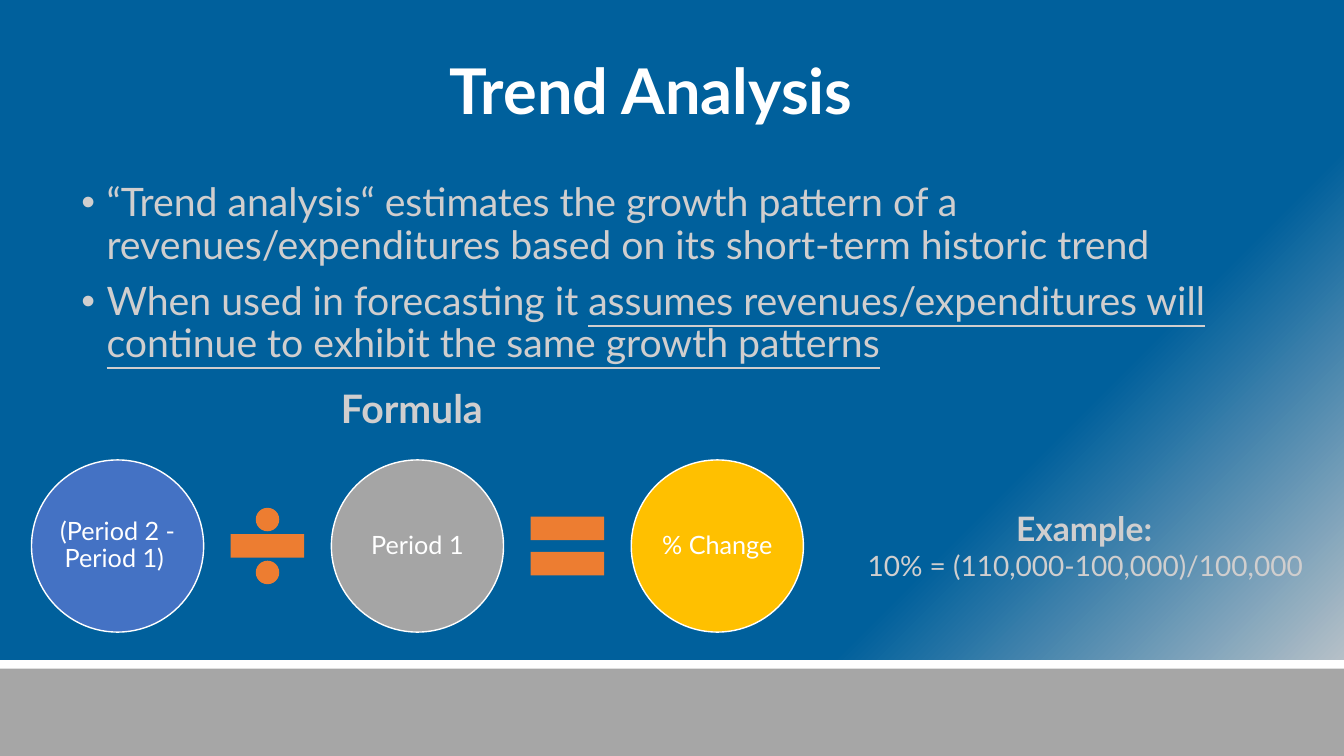
from copy import deepcopy

from pptx import Presentation
from pptx.dml.color import RGBColor
from pptx.enum.shapes import MSO_SHAPE
from pptx.enum.text import MSO_ANCHOR, PP_ALIGN
from pptx.oxml import parse_xml
from pptx.oxml.ns import nsdecls, qn
from pptx.util import Inches, Pt

COLS, ROWS = 160, 90
WHITE, PALE, BLUE = "FFFFFF", "D0CECE", "00609C"


def tint(code):
    return RGBColor.from_string(code)


def write(frame, text, size=28, color=PALE, bold=False, under=False,
          align=PP_ALIGN.LEFT, line=1.0, before=0, bullet=False, new=True):
    para = frame.paragraphs[-1]
    if new and para.runs:
        para = frame.add_paragraph()
    if new:
        para.alignment = align
        para.line_spacing = line
        para.space_before = Pt(before)
    if bullet:
        props = para._p.get_or_add_pPr()
        props.set("marL", str(Inches(0.25)))
        props.set("indent", str(-Inches(0.25)))
        props.append(parse_xml(f'<a:buFont {nsdecls("a")} typeface="Arial"/>'))
        props.append(parse_xml(f'<a:buChar {nsdecls("a")} char="•"/>'))
    run = para.add_run()
    run.text = text
    font = run.font
    font.name, font.size, font.bold = "Lato", Pt(size), bold
    font.underline = under
    font.color.rgb = tint(color)


class Board:
    def __init__(self, deck):
        self.wide, self.high = deck.slide_width, deck.slide_height
        self.slide = deck.slides.add_slide(deck.slide_layouts[6])
        self.shapes = self.slide.shapes

    def place(self, col, row, cols, rows):
        x, y = self.wide / COLS, self.high / ROWS
        return [round(v) for v in (col * x, row * y, cols * x, rows * y)]

    def paint(self, stops, angle):
        fill = self.slide.background.fill
        fill.gradient()
        fill.gradient_angle = angle
        marks = next(self.slide._element.iter(qn("a:gsLst")))
        while len(marks) < len(stops):
            marks.append(deepcopy(marks[0]))
        for stop, (share, color) in zip(fill.gradient_stops, stops):
            stop.position = share
            stop.color.rgb = tint(color)

    def shape(self, kind, area, fill, edge=None):
        item = self.shapes.add_shape(kind, *self.place(*area))
        item.shadow.inherit = False
        item.fill.solid()
        item.fill.fore_color.rgb = tint(fill)
        if edge:
            item.line.color.rgb = tint(edge)
            item.line.width = Pt(1)
        else:
            item.line.fill.background()
        return item

    def middle(self, kind, col, row, size, fill, edge=None):
        area = (col - size / 2, row - size / 2, size, size)
        return self.shape(kind, area, fill, edge)

    def text(self, area, anchor=MSO_ANCHOR.TOP, wrap=True):
        frame = self.shapes.add_textbox(*self.place(*area)).text_frame
        frame.word_wrap = wrap
        frame.vertical_anchor = anchor
        return frame

    def circle(self, label, col, row, fill):
        item = self.middle(MSO_SHAPE.OVAL, col, row, 20.5, fill, WHITE)
        frame = item.text_frame
        frame.word_wrap = True
        frame.vertical_anchor = MSO_ANCHOR.MIDDLE
        frame.margin_left = frame.margin_right = Inches(0.03)
        frame.margin_top = frame.margin_bottom = Inches(0.03)
        write(frame, label, size=18, color=WHITE, align=PP_ALIGN.CENTER, line=0.9)


def main():
    deck = Presentation()
    deck.slide_width, deck.slide_height = Inches(13.33), Inches(7.5)
    board = Board(deck)
    board.paint([(0, BLUE), (0.71, BLUE), (0.99, PALE)], 315)
    board.shape(MSO_SHAPE.RECTANGLE, (0, 78.6, COLS, 3.2), WHITE, WHITE)
    board.shape(MSO_SHAPE.RECTANGLE, (0, 79.6, COLS, 10.4), "A6A6A6")

    title = board.text((8.5, 4, 138, 14.5), MSO_ANCHOR.MIDDLE)
    write(title, "Trend Analysis", size=45, color=WHITE, bold=True,
          align=PP_ALIGN.CENTER, line=0.9)

    body = board.text((8.5, 21.2, 138, 30))
    write(body, "“Trend analysis“ estimates the growth pattern of a "
          "revenues/expenditures based on its short-term historic trend",
          line=0.9, bullet=True)
    write(body, "When used in forecasting it ", line=0.9, before=10, bullet=True)
    write(body, "assumes revenues/expenditures will continue to exhibit "
          "the same growth patterns", under=True, new=False)

    start, step, row = 14, 35.7, 65
    terms = [("(Period 2 - Period 1) ", "4472C4"), ("Period 1", "A5A5A5"),
             ("% Change", "FFC000")]
    for i, (label, fill) in enumerate(terms):
        board.circle(label, start + i * step, row, fill)
    for i, sign in enumerate((MSO_SHAPE.MATH_DIVIDE, MSO_SHAPE.MATH_EQUAL)):
        board.middle(sign, start + (i + 0.5) * step, row, 11.9, "ED7D31")

    sample = board.text((102.1, 59.9, 54.9, 10))
    write(sample, "Example: ", size=24, bold=True, align=PP_ALIGN.CENTER)
    write(sample, "10% = (110,000-100,000)/100,000", size=20)
    write(board.text((39.4, 45.2, 20.6, 6.8), wrap=False), "Formula", bold=True)
    deck.save("out.pptx")


if __name__ == "__main__":
    main()
